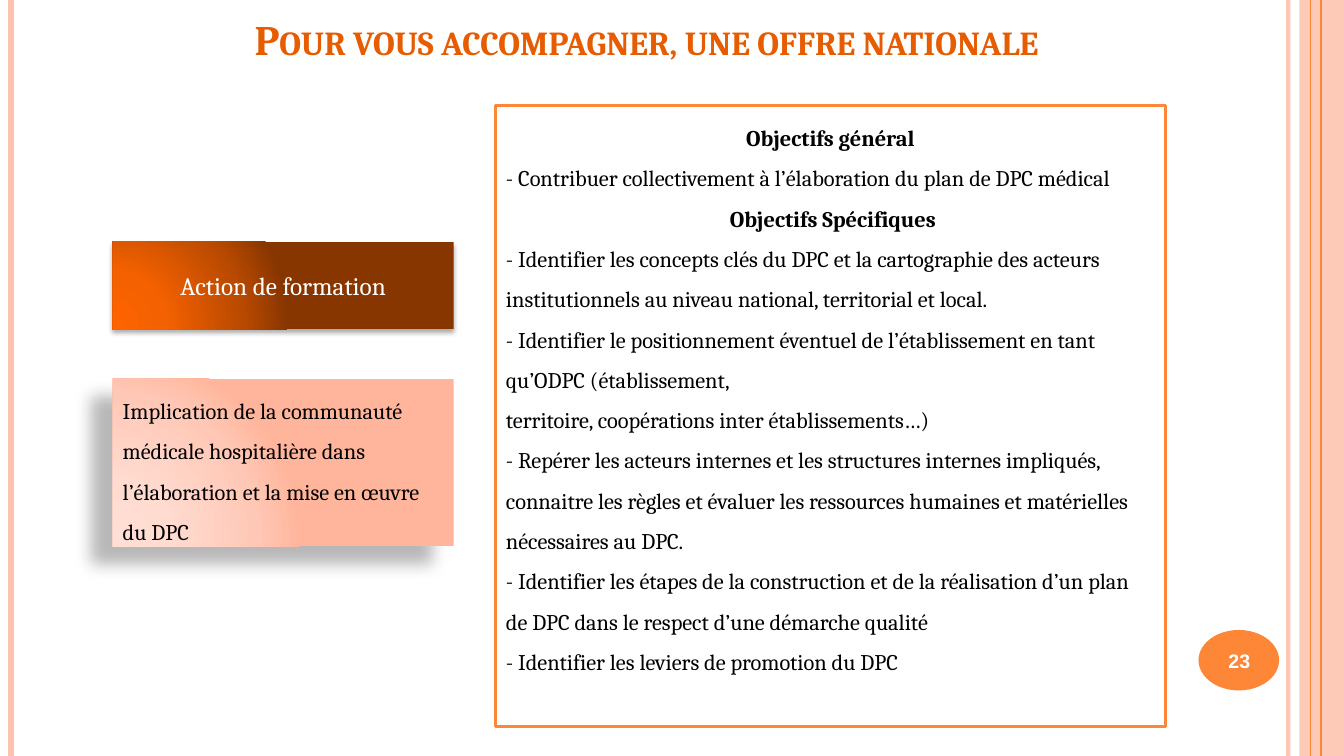
from dataclasses import dataclass
from typing import Optional

from lxml.etree import SubElement
from pptx import Presentation
from pptx.dml.color import RGBColor
from pptx.enum.shapes import MSO_CONNECTOR, MSO_SHAPE
from pptx.enum.text import MSO_ANCHOR, MSO_AUTO_SIZE, PP_ALIGN
from pptx.oxml.ns import qn
from pptx.util import Pt


@dataclass(frozen=True)
class Theme:
    white: str = "FFFFFF"
    black: str = "000000"
    orange: str = "FE8637"
    peach: str = "FEC3AE"
    title: str = "E75C01"
    dark_stops: tuple = ("FD6400", "F46100", "B74900", "873600")
    light_stops: tuple = ("FFDED5", "FFDBD0", "FFC8B6", "FFB59B")
    stop_places: tuple = (0, 30, 75, 100)
    glow: tuple = (("l", 5), ("t", 100), ("r", 120), ("b", 10))
    font: str = "Cambria"
    number_font: str = "Arial"
    title_size: float = 30
    heading_size: float = 18
    body_size: float = 16
    number_size: float = 14


@dataclass(frozen=True)
class Box:
    left: float
    top: float
    width: float
    height: float


@dataclass(frozen=True)
class Rule:
    x: float
    color: str
    width: float
    opacity: int = 100


@dataclass(frozen=True)
class Shadow:
    opacity: int
    blur: float
    distance: float
    angle: int


@dataclass(frozen=True)
class Card:
    text: str
    box: Box
    stops: tuple
    shadow: Shadow
    style: dict


@dataclass(frozen=True)
class Line:
    text: str
    heading: bool = False


T = Theme()
WIDTH, HEIGHT = 960, 540

RULES = [
    Rule(920.2, T.peach, 3, 93),
    Rule(7.9, T.peach, 4.5),
    Rule(943.9, T.orange, 1.5),
    Rule(936, T.orange, 0.75),
]
CARDS = [
    Card("Action de formation", Box(80.6, 172.8, 243.4, 62.6), T.dark_stops,
         Shadow(32, 3.5, 2.2, 90),
         dict(size=T.heading_size, color=T.white, align=PP_ALIGN.CENTER)),
    Card("Implication de la communauté médicale hospitalière dans "
         "l’élaboration et la mise en œuvre du DPC",
         Box(80.6, 270.7, 243.4, 119.5), T.light_stops,
         Shadow(28, 11.8, 19.7, 141), dict(spacing=1.5)),
]
OBJECTIVES = [
    Line("Objectifs général", True),
    Line("- Contribuer collectivement à l’élaboration du plan de DPC médical"),
    Line(" Objectifs Spécifiques", True),
    Line("- Identifier les concepts clés du DPC et la cartographie des acteurs "
         "institutionnels au niveau national, territorial et local."),
    Line("- Identifier le positionnement éventuel de l’établissement en tant "
         "qu’ODPC (établissement,\nterritoire, coopérations inter établissements…)"),
    Line("- Repérer les acteurs internes et les structures internes impliqués, "
         "connaitre les règles et évaluer les ressources humaines et matérielles "
         "nécessaires au DPC."),
    Line("- Identifier les étapes de la construction et de la réalisation d’un plan "
         "de DPC dans le respect d’une démarche qualité"),
    Line("- Identifier les leviers de promotion du DPC"),
]


def rgb(color: str) -> RGBColor:
    return RGBColor.from_string(color)


def set_opacity(sp, percent: int) -> None:
    for clr in sp.element.spPr.iter(qn("a:srgbClr")):
        SubElement(clr, qn("a:alpha"), val=str(percent * 1000))


def write(p, text: str, *, size: float = T.body_size, color: str = T.black,
          font: str = T.font, bold: bool = False, small_caps: bool = False,
          align=PP_ALIGN.LEFT, spacing: float = 1.0) -> None:
    p.text = text
    p.alignment, p.line_spacing = align, spacing
    p.space_before = Pt(0)
    for r in p.runs:
        r.font.name, r.font.size, r.font.bold = font, Pt(size), bold
        r.font.color.rgb = rgb(color)
        if small_caps:
            r.font._element.set("cap", "small")
    for br in p._p.findall(qn("a:br")):
        SubElement(br, qn("a:rPr"), sz=str(size * 100))


def place(sp, box: Box) -> None:
    sp.left, sp.top = Pt(box.left), Pt(box.top)
    sp.width, sp.height = Pt(box.width), Pt(box.height)


def frame(sp, anchor):
    tf = sp.text_frame
    tf.word_wrap, tf.auto_size = True, MSO_AUTO_SIZE.NONE
    tf.vertical_anchor = anchor
    return tf


def add_rule(slide, rule: Rule) -> None:
    cn = slide.shapes.add_connector(MSO_CONNECTOR.STRAIGHT, Pt(rule.x), Pt(0),
                                    Pt(rule.x), Pt(HEIGHT))
    cn.line.color.rgb, cn.line.width = rgb(rule.color), Pt(rule.width)
    if rule.opacity < 100:
        set_opacity(cn, rule.opacity)
    SubElement(cn.element.spPr, qn("a:effectLst"))


def add_filled(slide, kind, box: Box, color: str):
    sp = slide.shapes.add_shape(kind, Pt(box.left), Pt(box.top),
                                Pt(box.width), Pt(box.height))
    sp.fill.solid()
    sp.fill.fore_color.rgb = rgb(color)
    sp.line.fill.background()
    sp.shadow.inherit = False
    return sp


def set_glow(sp, stops: tuple) -> None:
    spPr = sp.element.spPr
    solid = spPr.find(qn("a:solidFill"))
    grad = SubElement(spPr, qn("a:gradFill"), rotWithShape="1")
    spPr.replace(solid, grad)
    gs_list = SubElement(grad, qn("a:gsLst"))
    for pos, color in zip(T.stop_places, stops):
        gs = SubElement(gs_list, qn("a:gs"), pos=str(pos * 1000))
        SubElement(gs, qn("a:srgbClr"), val=color)
    circle = SubElement(grad, qn("a:path"), path="circle")
    SubElement(circle, qn("a:fillToRect"),
               {side: str(value * 1000) for side, value in T.glow})


def set_shadow(sp, shadow: Shadow) -> None:
    effects = sp.element.spPr.find(qn("a:effectLst"))
    outer = SubElement(effects, qn("a:outerShdw"), blurRad=str(Pt(shadow.blur)),
                       dist=str(Pt(shadow.distance)),
                       dir=str(shadow.angle * 60000), rotWithShape="0")
    clr = SubElement(outer, qn("a:srgbClr"), val=T.black)
    SubElement(clr, qn("a:alpha"), val=str(shadow.opacity * 1000))


def add_card(slide, card: Card) -> None:
    sp = add_filled(slide, MSO_SHAPE.RECTANGLE, card.box, card.stops[-1])
    set_glow(sp, card.stops)
    set_shadow(sp, card.shadow)
    centred = "align" in card.style
    tf = frame(sp, MSO_ANCHOR.MIDDLE if centred else MSO_ANCHOR.TOP)
    write(tf.paragraphs[0], card.text, **card.style)


def fill_objectives(sp, lines: list[Line]) -> None:
    place(sp, Box(354.2, 75.6, 478.1, 443.5))
    sp.fill.solid()
    sp.fill.fore_color.rgb = rgb(T.white)
    sp.line.color.rgb, sp.line.width = rgb(T.orange), Pt(2)
    tf = frame(sp, MSO_ANCHOR.TOP)
    for i, line in enumerate(lines):
        p = tf.add_paragraph() if i else tf.paragraphs[0]
        write(p, line.text, bold=line.heading, spacing=1.5,
              align=PP_ALIGN.CENTER if line.heading else PP_ALIGN.LEFT)
        pPr = p._p.get_or_add_pPr()
        pPr.set("marL", "0")
        pPr.set("indent", "0")
        SubElement(pPr, qn("a:buNone"))


def add_number(slide, text: str, box: Optional[Box] = None) -> None:
    add_filled(slide, MSO_SHAPE.OVAL, Box(856.1, 450, 57.6, 43.2), T.orange)
    box = box or Box(853.2, 451.4, 64.1, 41)
    sp = slide.shapes.add_textbox(Pt(box.left), Pt(box.top),
                                  Pt(box.width), Pt(box.height))
    write(frame(sp, MSO_ANCHOR.MIDDLE).paragraphs[0], text, size=T.number_size,
          color=T.white, font=T.number_font, bold=True, align=PP_ALIGN.CENTER)


def main() -> None:
    prs = Presentation()
    prs.slide_width, prs.slide_height = Pt(WIDTH), Pt(HEIGHT)
    slide = prs.slides.add_slide(prs.slide_layouts[1])
    title, body = slide.placeholders
    place(title, Box(69.8, 8.6, 784.1, 41))
    write(frame(title, MSO_ANCHOR.BOTTOM).paragraphs[0],
          "Pour vous accompagner, une offre nationale", size=T.title_size,
          color=T.title, bold=True, small_caps=True, align=PP_ALIGN.CENTER)
    fill_objectives(body, OBJECTIVES)
    band = add_filled(slide, MSO_SHAPE.RECTANGLE, Box(928.1, 0, 31.9, HEIGHT), T.peach)
    set_opacity(band, 87)
    for rule in RULES:
        add_rule(slide, rule)
    add_number(slide, "23")
    for card in CARDS:
        add_card(slide, card)
    prs.save("out.pptx")


if __name__ == "__main__":
    main()
